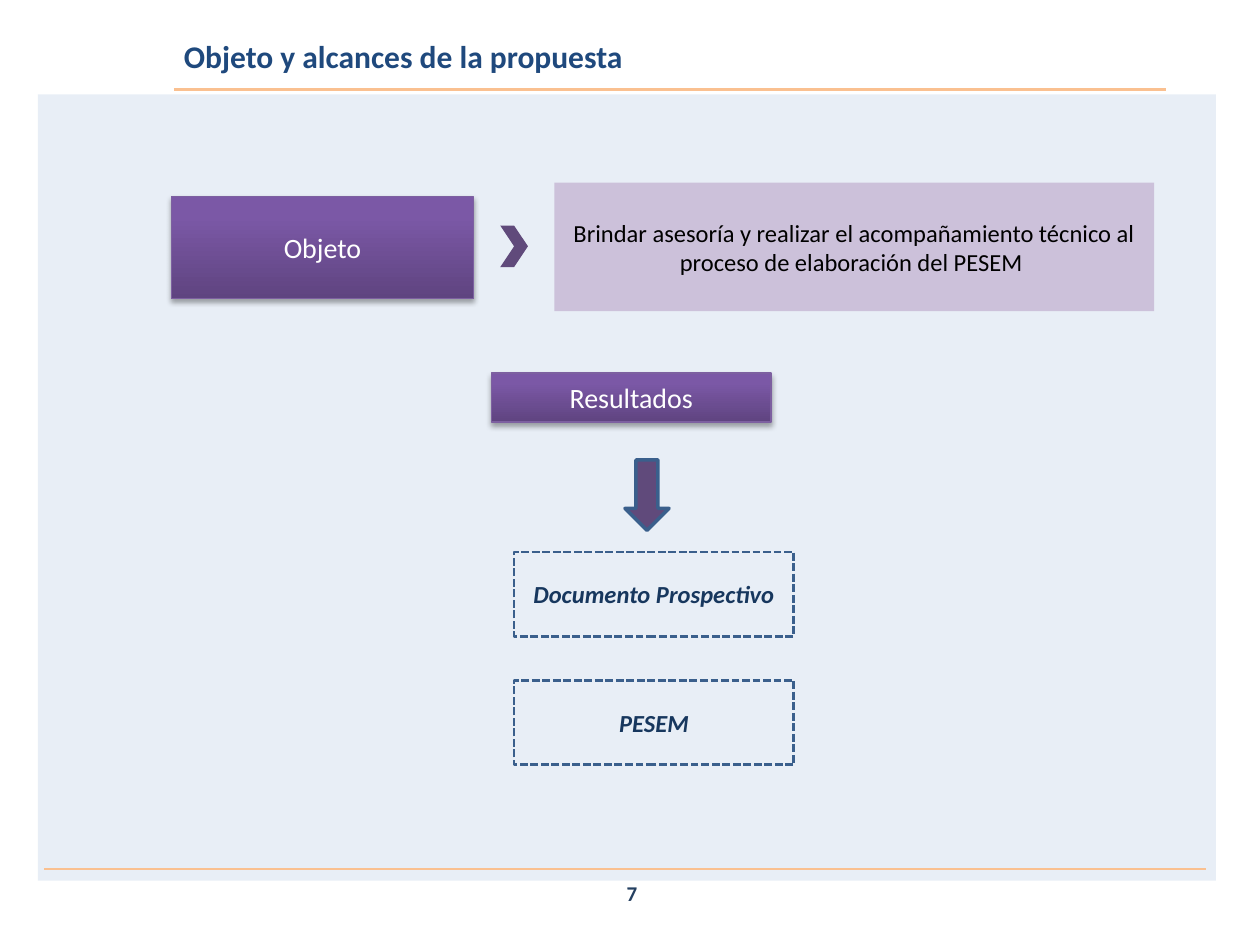
from dataclasses import dataclass
from typing import Optional

from lxml.etree import SubElement
from pptx import Presentation
from pptx.dml.color import RGBColor
from pptx.enum.dml import MSO_LINE
from pptx.enum.shapes import MSO_CONNECTOR, MSO_SHAPE
from pptx.enum.text import MSO_ANCHOR, PP_ALIGN
from pptx.oxml.ns import qn
from pptx.util import Inches, Pt

FONT = "Calibri"
NAVY = RGBColor(0x1F, 0x49, 0x7D)
DARK_NAVY = RGBColor(0x17, 0x37, 0x5E)
NUMBER_BLUE = RGBColor(0x25, 0x40, 0x61)
PANEL_BLUE = RGBColor(0x4F, 0x81, 0xBD)
OUTLINE_BLUE = RGBColor(0x3A, 0x5F, 0x8C)
ORANGE = RGBColor(0xFA, 0xC0, 0x90)
PURPLE = RGBColor(0x60, 0x4A, 0x7B)
PURPLE_EDGE = RGBColor(0x7D, 0x60, 0xA0)
LILAC = RGBColor(0xCC, 0xC1, 0xDA)
WHITE = RGBColor(0xFF, 0xFF, 0xFF)
BLACK = RGBColor(0x00, 0x00, 0x00)
GRADIENT = ((0, RGBColor(0x5F, 0x44, 0x80)),
            (80, RGBColor(0x7B, 0x58, 0xA6)),
            (100, RGBColor(0x7C, 0x57, 0xA8)))


@dataclass(frozen=True)
class Area:
    left: float
    top: float
    width: float
    height: float

    def lengths(self) -> tuple:
        return tuple(Inches(v) for v in (self.left, self.top, self.width, self.height))


@dataclass(frozen=True)
class Label:
    text: str
    size: float
    color: RGBColor
    bold: bool = False
    italic: bool = False
    align: PP_ALIGN = PP_ALIGN.CENTER


def write_label(shape, label: Label):
    frame = shape.text_frame
    frame.word_wrap = True
    frame.vertical_anchor = MSO_ANCHOR.MIDDLE
    para = frame.paragraphs[0]
    para.text = label.text
    para.alignment = label.align
    para.font.name = FONT
    para.font.size = Pt(label.size)
    para.font.bold = label.bold
    para.font.italic = label.italic
    para.font.color.rgb = label.color
    return para


def add_block(page, kind: MSO_SHAPE, area: Area, fill: Optional[RGBColor] = None,
              outline: Optional[RGBColor] = None, weight: float = 1):
    block = page.shapes.add_shape(kind, *area.lengths())
    block.shadow.inherit = False
    if fill is None:
        block.fill.background()
    else:
        block.fill.solid()
        block.fill.fore_color.rgb = fill
    if outline is None:
        block.line.fill.background()
    else:
        block.line.color.rgb = outline
        block.line.width = Pt(weight)
    return block


def add_color(parent, color: RGBColor, alpha: Optional[int] = None) -> None:
    node = SubElement(parent, qn("a:srgbClr"), val=str(color))
    if alpha is not None:
        SubElement(node, qn("a:alpha"), val=str(alpha * 1000))


def add_heading(page, area: Area, text: str) -> None:
    """Purple gradient block with a soft shadow below it."""
    block = add_block(page, MSO_SHAPE.RECTANGLE, area, PURPLE, PURPLE_EDGE, 0.75)
    block.fill.gradient()
    block.fill.gradient_angle = 90
    stops = block._element.spPr.find(".//" + qn("a:gsLst"))
    for stop in list(stops):
        stops.remove(stop)
    for position, color in GRADIENT:
        add_color(SubElement(stops, qn("a:gs"), pos=str(position * 1000)), color)
    effects = block._element.spPr.find(qn("a:effectLst"))
    shadow = SubElement(effects, qn("a:outerShdw"), blurRad=str(Pt(3.1)),
                        dist=str(Pt(1.8)), dir="5400000", rotWithShape="0")
    add_color(shadow, BLACK, 35)
    write_label(block, Label(text, 16, WHITE))


def add_result(page, area: Area, text: str) -> None:
    """Dashed box that names one result."""
    box = add_block(page, MSO_SHAPE.RECTANGLE, area, None, OUTLINE_BLUE, 1.5)
    box.line.dash_style = MSO_LINE.SQUARE_DOT
    para = write_label(box, Label(text, 14, DARK_NAVY, bold=True, italic=True))
    properties = para._p.get_or_add_pPr()
    properties.set("marL", str(Inches(0.1)))
    properties.set("indent", str(Inches(-0.1)))


def add_rule(page, left: float, right: float, y: float) -> None:
    rule = page.shapes.add_connector(MSO_CONNECTOR.STRAIGHT, Inches(left), Inches(y),
                                     Inches(right), Inches(y))
    rule.line.color.rgb = ORANGE
    rule.line.width = Pt(1.25)
    SubElement(rule._element.spPr, qn("a:effectLst"))


def main() -> None:
    deck = Presentation()
    deck.slide_width, deck.slide_height = Inches(10), Inches(7.5)
    page = deck.slides.add_slide(deck.slide_layouts[5])

    # Title
    title = page.shapes.title
    title.left, title.top, title.width, title.height = Area(1.36, 0.21, 8.11, 0.47).lengths()
    write_label(title, Label("Objeto y alcances de la propuesta", 18, NAVY, bold=True,
                             align=PP_ALIGN.LEFT))

    # Translucent panel and rules
    panel = add_block(page, MSO_SHAPE.RECTANGLE, Area(0.3, 0.75, 9.35, 6.24), PANEL_BLUE)
    tint = panel._element.spPr.find(qn("a:solidFill")).find(qn("a:srgbClr"))
    SubElement(tint, qn("a:alpha"), val="13000")
    add_rule(page, 1.38, 9.25, 0.71)
    add_rule(page, 0.35, 9.57, 6.9)

    # Objective
    add_heading(page, Area(1.36, 1.56, 2.4, 0.81), "Objeto")
    add_block(page, MSO_SHAPE.CHEVRON, Area(3.97, 1.79, 0.22, 0.33), PURPLE)
    objective = add_block(page, MSO_SHAPE.RECTANGLE, Area(4.4, 1.45, 4.76, 1.02), LILAC)
    write_label(objective, Label("Brindar asesoría y realizar el acompañamiento técnico al "
                                 "proceso de elaboración del PESEM ", 14, BLACK))

    # Results
    add_heading(page, Area(3.9, 2.96, 2.22, 0.39), "Resultados")
    add_block(page, MSO_SHAPE.DOWN_ARROW, Area(4.96, 3.65, 0.35, 0.56), PURPLE,
              OUTLINE_BLUE, 2)
    for row, text in enumerate(("Documento Prospectivo", "PESEM")):
        add_result(page, Area(4.08, 4.38 + row * 1.02, 2.22, 0.67), text)

    # Page number
    number = page.shapes.add_textbox(*Area(3.85, 6.89, 2.33, 0.4).lengths())
    write_label(number, Label("7", 12, NUMBER_BLUE, bold=True))

    deck.save("out.pptx")


if __name__ == "__main__":
    main()
